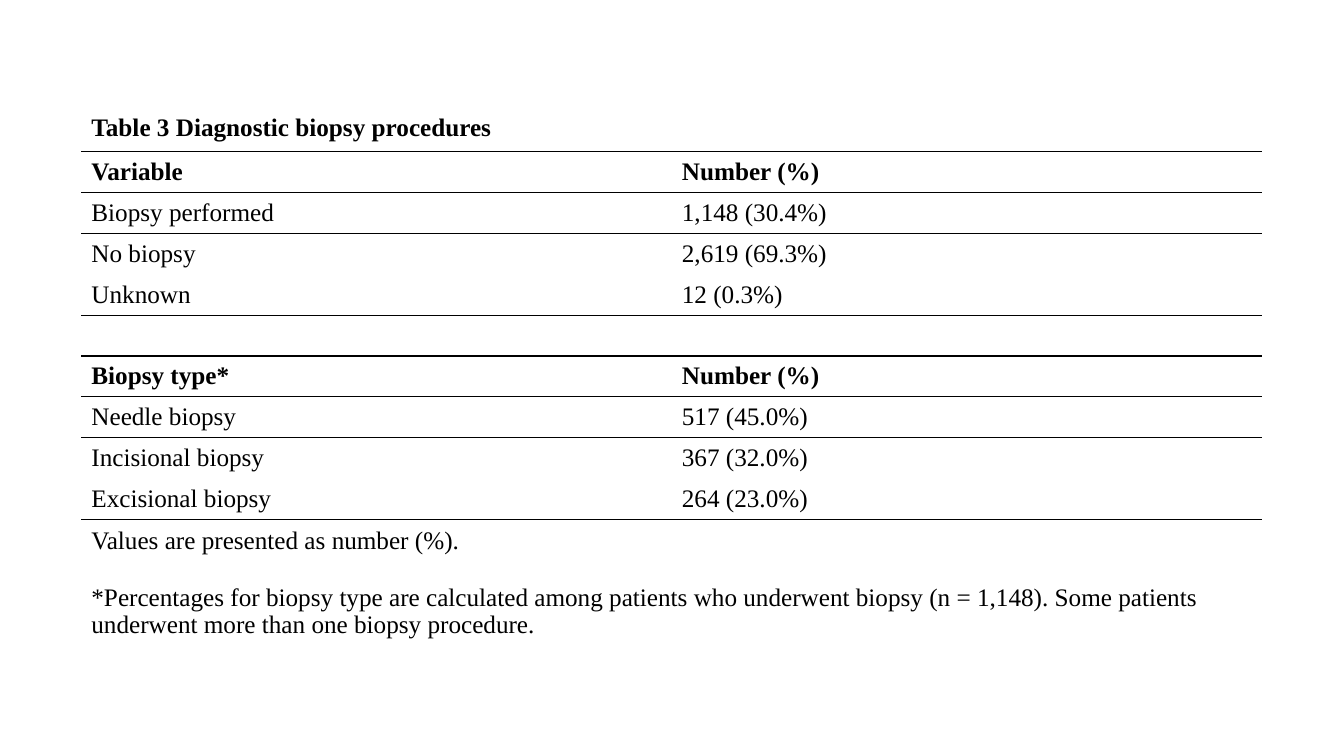
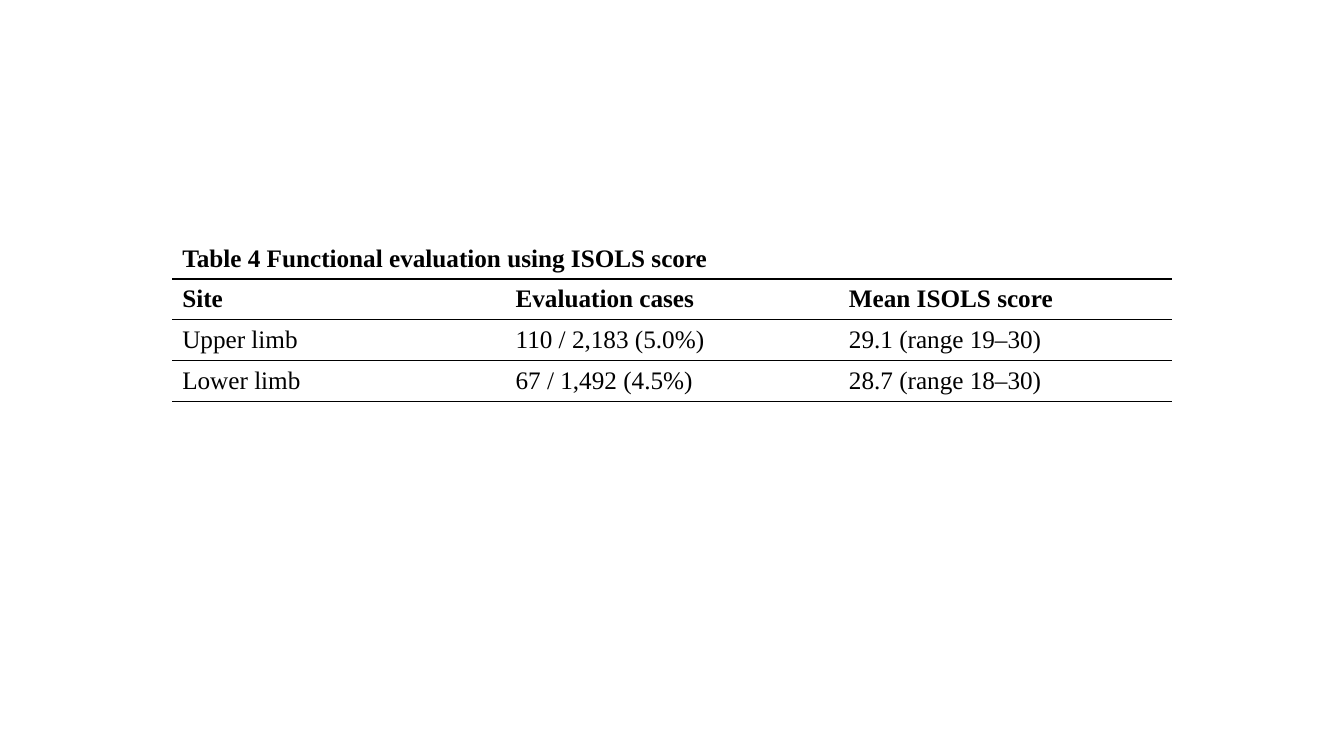
import pptx
import pptx.dml.color
import pptx.enum.text
import pptx.oxml
import pptx.oxml.ns
import pptx.util
from pptx.util import Cm

FONT = "Times New Roman"
FONT_SIZE = 18
INK = "000000"
RULE_WIDTH = 1
ROW_HEIGHT = 1.03
PLAIN_TABLE_STYLE = "{2D5ABB26-0587-4C30-8999-92F81FD0307C}"

BIOPSY_ROWS = [
    ["Table 3 Diagnostic biopsy procedures"],
    ["Variable", "Number (%)"],
    ["Biopsy performed", "1,148 (30.4%)"],
    ["No biopsy", "2,619 (69.3%)"],
    ["Unknown", "12 (0.3%)"],
    ["", ""],
    ["Biopsy type*", "Number (%)"],
    ["Needle biopsy", "517 (45.0%)"],
    ["Incisional biopsy", "367 (32.0%)"],
    ["Excisional biopsy", "264 (23.0%)"],
    ["Values are presented as number (%).\n"
     "*Percentages for biopsy type are calculated among patients who underwent "
     "biopsy (n = 1,148). Some patients underwent more than one biopsy procedure."],
]
SCORE_ROWS = [
    ["Table 4 Functional evaluation using ISOLS score"],
    ["Site", "Evaluation cases", "Mean ISOLS score"],
    ["Upper limb", "110 / 2,183 (5.0%)", "29.1 (range 19–30)"],
    ["Lower limb", "67 / 1,492 (4.5%)", "28.7 (range 18–30)"],
]


def color(hex_string):
    return pptx.dml.color.RGBColor.from_string(hex_string)


def write_cell(cell, text, bold):
    """Write each line of the text as a paragraph, one line apart."""
    cell.vertical_anchor = pptx.enum.text.MSO_ANCHOR.MIDDLE
    for index, line in enumerate(text.split("\n")):
        frame = cell.text_frame
        paragraph = frame.add_paragraph() if index else frame.paragraphs[0]
        paragraph.font.size = pptx.util.Pt(FONT_SIZE)
        if index:
            paragraph.space_before = pptx.util.Pt(20.7)
        if line:
            run = paragraph.add_run()
            run.text = line
            run.font.name = FONT
            run.font.size = pptx.util.Pt(FONT_SIZE)
            run.font.bold = bold
            run.font.color.rgb = color(INK)


def set_borders(cell, ruled_above, ruled_below):
    properties = cell._tc.get_or_add_tcPr()
    sides = {"L": False, "R": False, "T": ruled_above, "B": ruled_below}
    for side, ruled in sides.items():
        fill = (f'<a:solidFill><a:srgbClr val="{INK}"/></a:solidFill>'
                if ruled else "<a:noFill/>")
        properties.append(pptx.oxml.parse_xml(
            f'<a:ln{side} {pptx.oxml.ns.nsdecls("a")} '
            f'w="{pptx.util.Pt(RULE_WIDTH)}">{fill}</a:ln{side}>'))


def add_ruled_table(slide, left, top, column_width, rows, heading_rows,
                    ruled_rows, special_heights):
    """Draw a table with a rule under each of ruled_rows; one-item rows span it."""
    column_count = max(len(row) for row in rows)
    heights = [special_heights.get(index, ROW_HEIGHT) for index in range(len(rows))]
    table = slide.shapes.add_table(
        len(rows), column_count, Cm(left), Cm(top),
        Cm(column_width * column_count), Cm(sum(heights))).table
    table.first_row = table.horz_banding = False
    style = table._tbl.tblPr.find(pptx.oxml.ns.qn("a:tableStyleId"))
    style.text = PLAIN_TABLE_STYLE
    for column in table.columns:
        column.width = Cm(column_width)
    for row_index, texts in enumerate(rows):
        table.rows[row_index].height = Cm(heights[row_index])
        for column_index in range(column_count):
            cell = table.cell(row_index, column_index)
            set_borders(cell, row_index - 1 in ruled_rows, row_index in ruled_rows)
            cell.fill.background()
        if len(texts) == 1:
            table.cell(row_index, 0).merge(table.cell(row_index, column_count - 1))
        for column_index, text in enumerate(texts):
            write_cell(table.cell(row_index, column_index), text,
                       row_index in heading_rows)


def main():
    presentation = pptx.Presentation()
    presentation.slide_width = Cm(33.87)
    presentation.slide_height = Cm(19.05)
    blank_layout = presentation.slide_layouts[6]

    biopsy_slide = presentation.slides.add_slide(blank_layout)
    add_ruled_table(biopsy_slide, 2.05, 2.64, 14.88, BIOPSY_ROWS,
                    heading_rows={0, 1, 6}, ruled_rows={0, 1, 2, 4, 5, 6, 7, 9},
                    special_heights={0: 1.18, 10: 3.2})

    score_slide = presentation.slides.add_slide(blank_layout)
    add_ruled_table(score_slide, 4.34, 6, 8.4, SCORE_ROWS,
                    heading_rows={0, 1}, ruled_rows={0, 1, 2, 3},
                    special_heights={})

    presentation.save("out.pptx")


if __name__ == "__main__":
    main()
